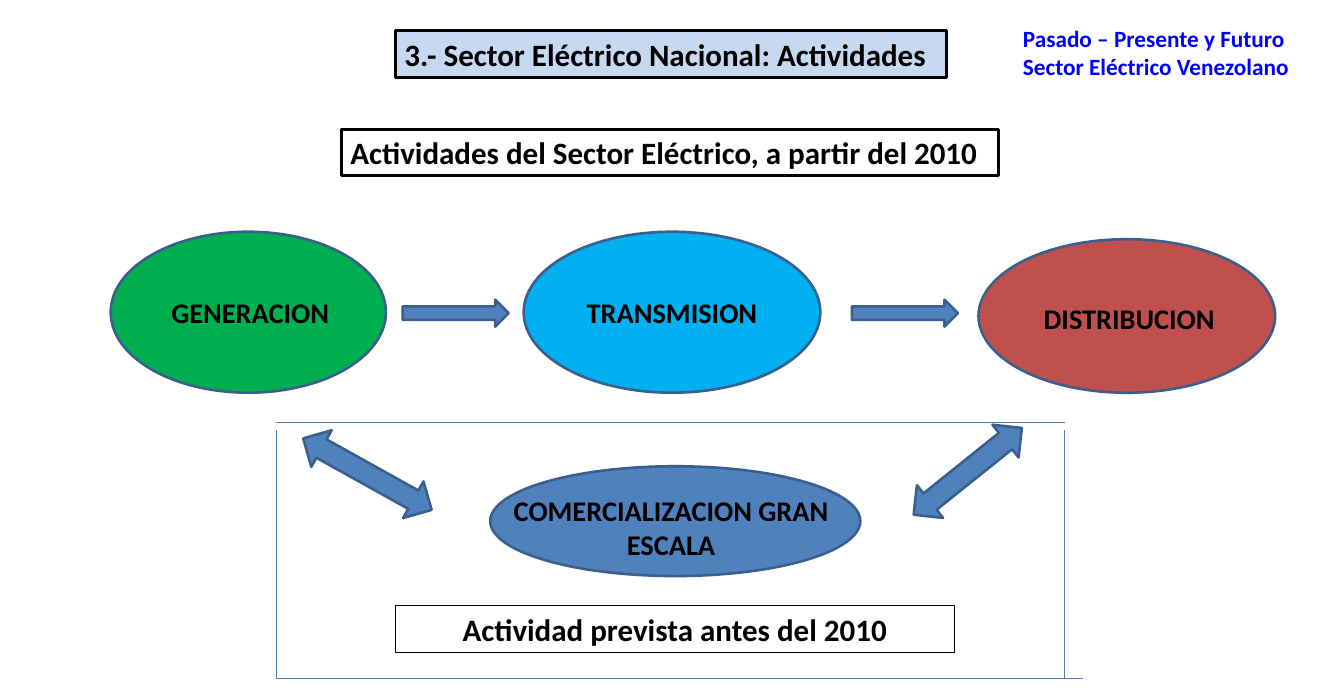
from dataclasses import dataclass

import pptx
import pptx.dml.color
import pptx.enum.shapes
import pptx.enum.text
import pptx.oxml
import pptx.oxml.ns
import pptx.util

Inches = pptx.util.Inches
Pt = pptx.util.Pt
Preset = pptx.enum.shapes.MSO_SHAPE
Align = pptx.enum.text.PP_ALIGN

BLACK, BLUE, PALE_BLUE = "000000", "0000FF", "C6D9F1"
ACCENT, OUTLINE, FRAME = "4F81BD", "3A5F8C", "4B7EBC"


@dataclass
class Figure:
    preset: Preset
    left: float
    top: float
    width: float
    height: float
    fill: str = ACCENT
    rotation: float = 0


@dataclass
class Caption:
    lines: list[str]
    left: float
    top: float
    width: float
    height: float
    size: int = 22
    color: str = BLACK
    align: Align = Align.CENTER
    fill: str | None = None
    border: float = 0
    wrap: bool = True


@dataclass
class Edge:
    x1: float
    y1: float
    x2: float
    y2: float


ACTIVITIES = [
    Figure(Preset.OVAL, 1.19, 2.49, 2.96, 1.73, "00B050"),
    Figure(Preset.OVAL, 5.63, 2.49, 3.19, 1.73, "00B0F0"),
    Figure(Preset.OVAL, 10.52, 2.57, 3.19, 1.65, "C0504D"),
    Figure(Preset.OVAL, 5.27, 5.01, 3.98, 1.18),
]
ARROWS = [
    Figure(Preset.RIGHT_ARROW, 4.33, 3.22, 1.14, 0.29),
    Figure(Preset.RIGHT_ARROW, 9.16, 3.22, 1.14, 0.29),
    Figure(Preset.LEFT_RIGHT_ARROW, 3.16, 4.87, 1.58, 0.45, rotation=29.1),
    Figure(Preset.LEFT_RIGHT_ARROW, 9.66, 4.84, 1.49, 0.45, rotation=321.3),
]
ACTIVITY_NAMES = [
    Caption(["GENERACION"], 1.27, 3.12, 2.84, 0.47),
    Caption(["TRANSMISION"], 5.69, 3.12, 3.07, 0.47),
    Caption(["DISTRIBUCION"], 10.15, 3.19, 3.98, 0.47),
    Caption(["COMERCIALIZACION GRAN ESCALA"], 5.11, 5.25, 4.21, 0.84),
]
HEADINGS = [
    Caption(["3.- Sector Eléctrico Nacional: Actividades"], 4.25, 0.33, 5.93, 0.5,
            size=24, align=Align.LEFT, fill=PALE_BLUE, border=2.25),
    Caption(["Actividades del Sector Eléctrico, a partir del 2010"], 3.67, 1.39, 7.07, 0.5,
            size=24, align=Align.LEFT, border=2.25),
    Caption(["Actividad prevista antes del 2010"], 4.25, 6.51, 6.01, 0.5,
            size=24, border=0.75),
    Caption(["Pasado – Presente y Futuro", "Sector Eléctrico Venezolano"], 10.9, 0.21, 3.1, 0.71,
            size=18, color=BLUE, align=Align.LEFT, wrap=False),
]
LEFT, RIGHT, TOP, BOTTOM = 2.97, 11.45, 4.54, 7.29
FRAME_EDGES = [
    Edge(LEFT, TOP, RIGHT, TOP),
    Edge(LEFT, TOP + 0.08, LEFT, BOTTOM),
    Edge(RIGHT, TOP + 0.08, RIGHT, BOTTOM),
    Edge(LEFT, BOTTOM, RIGHT + 0.19, BOTTOM),
]


def rgb(value: str) -> pptx.dml.color.RGBColor:
    return pptx.dml.color.RGBColor.from_string(value)


def set_fill(shape, color: str) -> None:
    shape.fill.solid()
    shape.fill.fore_color.rgb = rgb(color)


def set_line(shape, color: str, width: float) -> None:
    shape.line.color.rgb = rgb(color)
    shape.line.width = Pt(width)


def draw_figure(slide, figure: Figure) -> None:
    shape = slide.shapes.add_shape(
        figure.preset, Inches(figure.left), Inches(figure.top),
        Inches(figure.width), Inches(figure.height))
    shape.shadow.inherit = False
    shape.rotation = figure.rotation
    set_fill(shape, figure.fill)
    set_line(shape, OUTLINE, 2)


def draw_caption(slide, caption: Caption) -> None:
    box = slide.shapes.add_textbox(
        Inches(caption.left), Inches(caption.top),
        Inches(caption.width), Inches(caption.height))
    if caption.fill:
        set_fill(box, caption.fill)
    if caption.border:
        set_line(box, BLACK, caption.border)
    frame = box.text_frame
    frame.word_wrap = caption.wrap
    frame.auto_size = pptx.enum.text.MSO_AUTO_SIZE.SHAPE_TO_FIT_TEXT
    frame.text = "\n".join(caption.lines)
    for paragraph in frame.paragraphs:
        paragraph.alignment = caption.align
        paragraph.font.name = "Calibri"
        paragraph.font.size = Pt(caption.size)
        paragraph.font.bold = True
        paragraph.font.color.rgb = rgb(caption.color)


def draw_edge(slide, edge: Edge) -> None:
    line = slide.shapes.add_connector(
        pptx.enum.shapes.MSO_CONNECTOR.STRAIGHT,
        Inches(edge.x1), Inches(edge.y1), Inches(edge.x2), Inches(edge.y2))
    set_line(line, FRAME, 0.75)
    properties = line._element.spPr
    properties.append(properties.makeelement(pptx.oxml.ns.qn("a:effectLst"), {}))


def main() -> None:
    deck = pptx.Presentation()
    deck.slide_width, deck.slide_height = Inches(14.45), Inches(7.5)
    slide = deck.slides.add_slide(deck.slide_layouts[6])

    # Activities and the arrows between them
    for figure in ACTIVITIES + ARROWS:
        draw_figure(slide, figure)

    # Frame around the activity planned before 2010
    for edge in FRAME_EDGES:
        draw_edge(slide, edge)

    # Activity names and headings
    for caption in ACTIVITY_NAMES + HEADINGS:
        draw_caption(slide, caption)

    deck.save("out.pptx")


if __name__ == "__main__":
    main()
